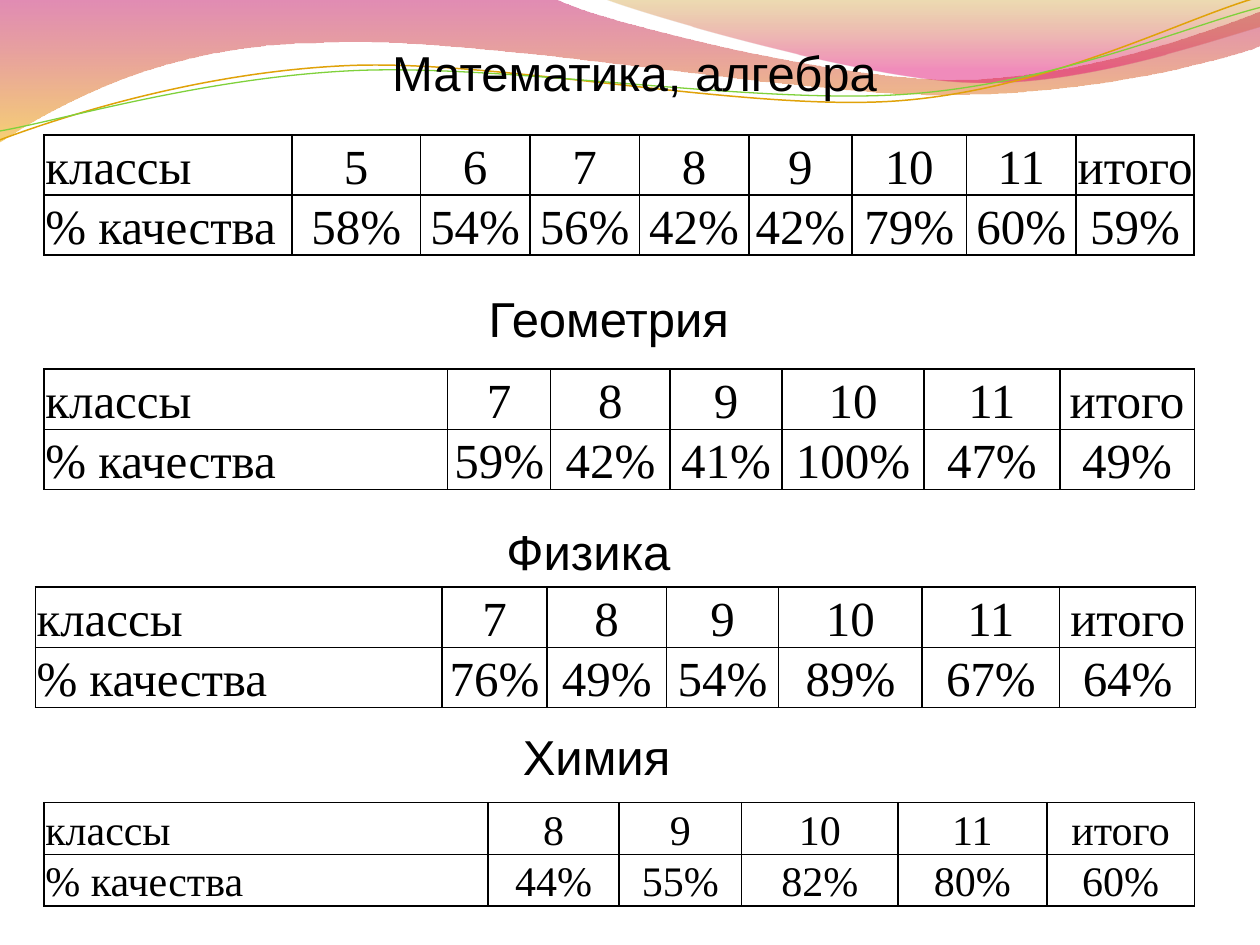
from dataclasses import dataclass
from math import cos, radians, sin

from lxml.etree import SubElement
from pptx import Presentation
from pptx.dml.color import RGBColor
from pptx.enum.text import MSO_ANCHOR, MSO_AUTO_SIZE, PP_ALIGN
from pptx.oxml import parse_xml
from pptx.oxml.ns import nsdecls, qn
from pptx.util import Inches, Pt


@dataclass(frozen=True)
class Theme:
    ink: str = "000000"
    gold: str = "E0A209"
    green: str = "7FD13B"
    # Gradient stops: position, colour, opacity in percent
    rose_to_amber: tuple = ((0, "BD0059", 45), (1, "F0AB00", 55))
    sand_to_pink: tuple = ((0, "C38B00", 30), (0.8, "E1006B", 45))
    heading_font: str = "Arial"
    table_font: str = "Times New Roman"
    heading_size: int = 28
    table_size: int = 28
    small_table_size: int = 24
    border: int = 1


THEME = Theme()
LINE_TILT = -2.7

# Waves: a start point, then lines (x, y) and Bézier curves (x1, y1, x2, y2, x, y)
LEFT_WAVE = [
    (0, -0.01), (4.4, -0.01),
    (4.76, 0.17, 6.64, 0.63, 7.58, 0.63), (8.53, 0.63, 9.58, 0.26, 10, 0.09),
    (10.01, 0.36),
    (9.83, 0.44, 8.7, 0.76, 7.46, 0.75), (6.22, 0.75, 3.82, 0.28, 2.57, 0.34),
    (1.29, 0.35, 0.46, 0.83, -0.01, 1.13), (0, -0.01),
]
RIGHT_WAVE = [
    (4.79, -0.01),
    (5.09, 0.11, 6.82, 0.62, 7.69, 0.65), (8.56, 0.69, 9.61, 0.32, 10, 0.21),
    (10, 0), (4.79, -0.01),
]
GOLD_LINE = [
    (0, 1.11),
    (0.48, 0.93, 1.58, 0.57, 2.77, 0.52), (3.95, 0.47, 5.93, 0.89, 7.13, 0.8),
    (8.33, 0.71, 9.38, 0.15, 9.98, -0.02),
]
GREEN_LINE = [
    (0, 1.04),
    (0.47, 0.96, 1.64, 0.61, 2.83, 0.56), (4.03, 0.51, 5.97, 0.83, 7.17, 0.75),
    (8.36, 0.67, 9.41, 0.21, 10, 0.06),
]

# Subject, heading box, table box, column widths, classes, quality, type size
SUBJECTS = [
    ("Математика, алгебра", (2.87, 0.29, 4.33, 0.57), (0.35, 1.07, 9.13, 0.95),
     (1.97, 1.02, 0.87, 0.87, 0.87, 0.82, 0.91, 0.87, 0.94),
     range(5, 12), (58, 54, 56, 42, 42, 79, 60, 59), THEME.table_size),
    ("Геометрия ", (2.72, 2.24, 4.33, 0.57), (0.35, 2.93, 9.13, 0.95),
     (3.21, 0.82, 0.95, 0.89, 1.13, 1.08, 1.07),
     range(7, 12), (59, 42, 41, 100, 47, 49), THEME.table_size),
    ("Физика ", (2.56, 4.09, 4.33, 0.57), (0.28, 4.66, 9.21, 0.95),
     (3.23, 0.83, 0.95, 0.89, 1.14, 1.09, 1.08),
     range(7, 12), (76, 49, 54, 89, 67, 64), THEME.table_size),
    ("Химия", (2.57, 5.72, 4.33, 0.57), (0.35, 6.37, 9.13, 0.82),
     (3.52, 1.04, 0.97, 1.24, 1.18, 1.17),
     range(8, 12), (44, 55, 82, 80, 60), THEME.small_table_size),
]


def inches(values):
    return [Inches(v) for v in values]


def set_font(p, name, size):
    p.font.name = name
    p.font.size = Pt(size)
    p.font.color.rgb = RGBColor.from_string(THEME.ink)


def turn(point, center, degrees):
    (x, y), (cx, cy), a = point, center, radians(degrees)
    return (cx + (x - cx) * cos(a) - (y - cy) * sin(a),
            cy + (x - cx) * sin(a) + (y - cy) * cos(a))


def add_outline(s, outline, tilt=0, center=(0, 0)):
    """Draw the outline; a tilted one is laid flat, then rotated as a shape."""
    points = [inches(turn(seg[i:i + 2], center, -tilt))
              for seg in outline for i in range(0, len(seg), 2)]
    builder = s.shapes.build_freeform(*points[0])
    builder.add_line_segments(points[1:], close=False)
    sp = builder.convert_to_shape()
    sp.rotation = tilt
    sp.shadow.inherit = False
    # Join each three points of a curve into one Bézier segment
    steps = iter(list(sp._element.iter(qn("a:lnTo"))))
    for seg in outline[1:]:
        step = next(steps)
        if len(seg) == 6:
            step.tag = qn("a:cubicBezTo")
            for other in (next(steps), next(steps)):
                step.append(other[0])
                other.getparent().remove(other)
    return sp


def add_wave(s, outline, stops):
    sp = add_outline(s, outline)
    sp.line.fill.background()
    sp.fill.gradient()
    sp.fill.gradient_angle = 270
    for stop, (position, color, _) in zip(sp.fill.gradient_stops, stops):
        stop.position = position
        stop.color.rgb = RGBColor.from_string(color)
    for clr, (_, _, opacity) in zip(sp._element.spPr.iter(qn("a:srgbClr")), stops):
        SubElement(clr, qn("a:alpha"), val=str(opacity * 1000))


def add_wave_line(s, outline, center, color, width):
    sp = add_outline(s, outline, LINE_TILT, center)
    sp.fill.background()
    sp.line.color.rgb = RGBColor.from_string(color)
    sp.line.width = Pt(width)


def add_waves(s):
    add_wave(s, LEFT_WAVE, THEME.rose_to_amber)
    add_wave(s, RIGHT_WAVE, THEME.sand_to_pink)
    add_wave_line(s, GOLD_LINE, (4.99, 0.58), THEME.gold, 0.85)
    add_wave_line(s, GREEN_LINE, (5, 0.59), THEME.green, 0.75)


def format_heading(sp, text, box):
    sp.left, sp.top, sp.width, sp.height = inches(box)
    tf = sp.text_frame
    tf.word_wrap = True
    tf.auto_size = MSO_AUTO_SIZE.SHAPE_TO_FIT_TEXT
    tf.vertical_anchor = MSO_ANCHOR.TOP
    p = tf.paragraphs[0]
    p.text = text
    p.alignment = PP_ALIGN.CENTER
    set_font(p, THEME.heading_font, THEME.heading_size)


def format_cell(cell, text, size, align):
    cell.vertical_anchor = MSO_ANCHOR.BOTTOM
    cell.margin_left = cell.margin_right = cell.margin_top = Inches(0.01)
    cell.margin_bottom = 0
    p = cell.text_frame.paragraphs[0]
    p.text = text
    p.alignment = align
    set_font(p, THEME.table_font, size)
    cell.fill.background()
    # Borders come before the fill in the cell properties
    for i, side in enumerate(("lnL", "lnR", "lnT", "lnB")):
        cell._tc.tcPr.insert(i, parse_xml(
            f'<a:{side} {nsdecls("a")} w="{Pt(THEME.border)}"><a:solidFill>'
            f'<a:srgbClr val="{THEME.ink}"/></a:solidFill></a:{side}>'))


def add_quality_table(s, box, widths, classes, quality, size):
    rows = [["классы", *map(str, classes), "итого"],
            ["% качества", *(f"{q}%" for q in quality)]]
    table = s.shapes.add_table(len(rows), len(widths), *inches(box)).table
    table.first_row = table.horz_banding = False
    # The columns share out the full width of the box
    for col, width in zip(table.columns, widths):
        col.width = Inches(width * box[2] / sum(widths))
    for r, row in enumerate(rows):
        table.rows[r].height = Inches(box[3] / len(rows))
        for c, text in enumerate(row):
            align = PP_ALIGN.CENTER if c else PP_ALIGN.LEFT
            format_cell(table.cell(r, c), text, size, align)


def build_results_slide(prs):
    s = prs.slides.add_slide(prs.slide_layouts[5])
    add_waves(s)
    # The title stands in front of the waves
    title = s.shapes.title
    s.shapes._spTree.append(title._element)
    for i, (name, heading_box, *table_parts) in enumerate(SUBJECTS):
        sp = s.shapes.add_textbox(*inches(heading_box)) if i else title
        format_heading(sp, name, heading_box)
        add_quality_table(s, *table_parts)


def main():
    prs = Presentation()
    prs.slide_width, prs.slide_height = Inches(10), Inches(7.5)
    build_results_slide(prs)
    prs.save("out.pptx")


if __name__ == "__main__":
    main()
